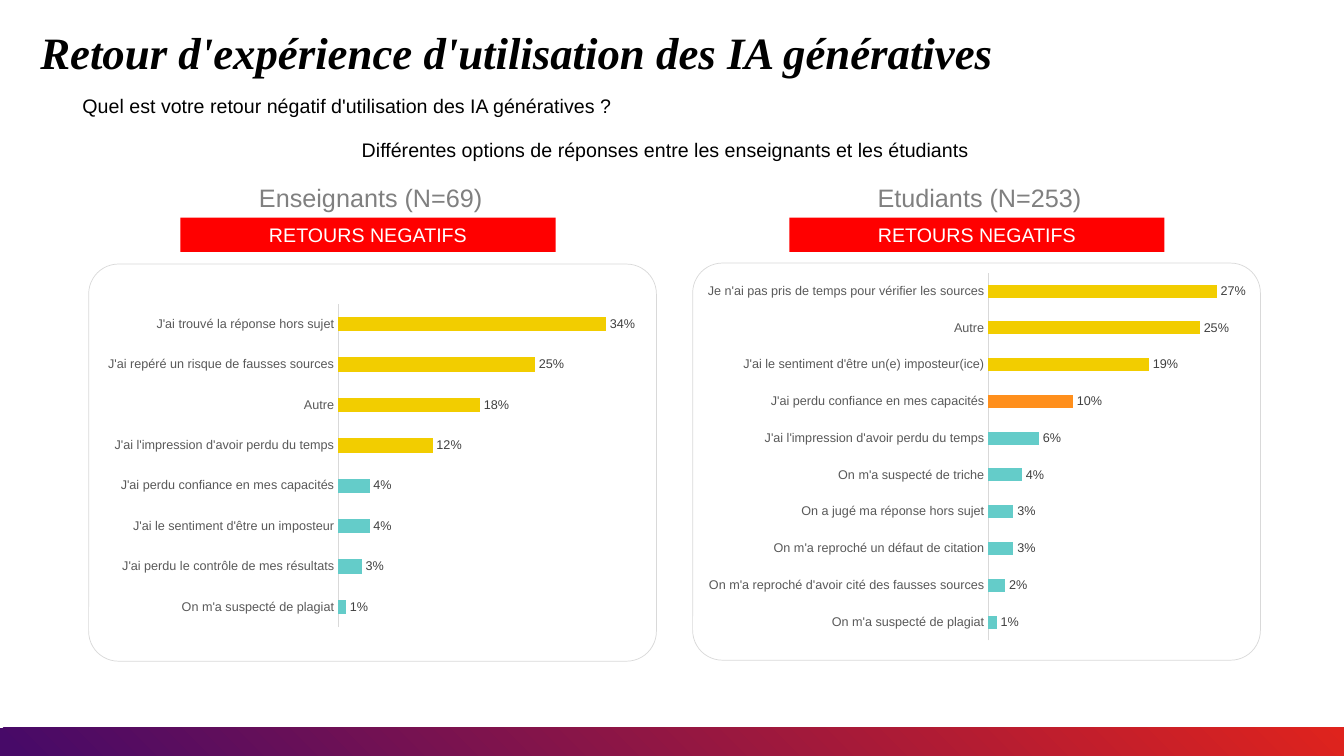
from dataclasses import dataclass

from lxml import etree
from pptx import Presentation
from pptx.chart.data import CategoryChartData
from pptx.dml.color import RGBColor
from pptx.enum.chart import XL_CHART_TYPE as ChartType
from pptx.enum.chart import XL_LABEL_POSITION as LabelPosition
from pptx.enum.chart import XL_TICK_MARK as TickMark
from pptx.enum.shapes import MSO_SHAPE as Preset
from pptx.enum.text import MSO_ANCHOR as Anchor
from pptx.enum.text import PP_ALIGN as Align
from pptx.oxml.ns import qn
from pptx.util import Inches, Pt


@dataclass(frozen=True)
class Theme:
    body_font: str = "Arial"
    title_font: str = "Times New Roman"
    black: str = "000000"
    white: str = "FFFFFF"
    heading: str = "808080"
    banner: str = "FF0000"
    border: str = "D9D9D9"
    category: str = "595959"
    value: str = "404040"
    high: str = "F2CD00"
    medium: str = "FF8F1C"
    low: str = "64CCC9"
    footer_start: str = "DF231D"
    footer_end: str = "470A68"
    title_size: int = 32
    heading_size: int = 18
    text_size: int = 14
    chart_size: int = 10
    label_size: int = 9


THEME = Theme()
WIDTH, HEIGHT = Inches(13.33), Inches(7.5)

# Boxes are left, top, width, height on a grid of 100 columns and 100 rows
FOOTER_BOX = (0, 96.27, 100, 3.73)
TITLE_BOX = (3, 4.13, 92.35, 13.47)
QUESTION_BOX = (5.4, 11.73, 42, 4.53)
NOTE_BOX = (26.18, 17.6, 47.71, 4.53)

GROUPS = [
    {
        "heading": "Enseignants (N=69)",
        "heading_box": (18.53, 23.47, 19.58, 5.33),
        "heading_align": Align.LEFT,
        "banner_box": (13.43, 28.8, 27.91, 4.53),
        "panel_box": (6.6, 34.93, 42.24, 52.53),
        "chart_box": (7.2, 39.33, 42.24, 44.53),
        "maximum": 0.4,
        "answers": [
            ("On m'a suspecté de plagiat", 0.01),
            ("J'ai perdu le contrôle de mes résultats", 0.03),
            ("J'ai le sentiment d'être un imposteur", 0.04),
            ("J'ai perdu confiance en mes capacités", 0.04),
            ("J'ai l'impression d'avoir perdu du temps", 0.12),
            ("Autre", 0.18),
            ("J'ai repéré un risque de fausses sources", 0.25),
            ("J'ai trouvé la réponse hors sujet", 0.34),
        ],
    },
    {
        "heading": "Etudiants (N=253)",
        "heading_box": (63.09, 23.47, 19.58, 5.33),
        "heading_align": Align.CENTER,
        "banner_box": (58.74, 28.8, 27.91, 4.53),
        "panel_box": (51.54, 34.8, 42.24, 52.53),
        "chart_box": (51.84, 35.07, 41.41, 50.67),
        "maximum": 0.3,
        "answers": [
            ("On m'a suspecté de plagiat", 0.01),
            ("On m'a reproché d'avoir cité des fausses sources", 0.02),
            ("On m'a reproché un défaut de citation", 0.03),
            ("On a jugé ma réponse hors sujet", 0.03),
            ("On m'a suspecté de triche", 0.04),
            ("J'ai l'impression d'avoir perdu du temps", 0.06),
            ("J'ai perdu confiance en mes capacités", 0.1),
            ("J'ai le sentiment d'être un(e) imposteur(ice)", 0.19),
            ("Autre", 0.25),
            ("Je n'ai pas pris de temps pour vérifier les sources", 0.27),
        ],
    },
]


def place(box):
    return [round(share * side / 100) for share, side in zip(box, (WIDTH, HEIGHT) * 2)]


def apply(target, values):
    for name, value in values.items():
        setattr(target, name, value)


def style_font(font, size, color, name=THEME.body_font, **values):
    apply(font, {"size": Pt(size), "name": name, **values})
    font.color.rgb = RGBColor.from_string(color)


def fill_solid(fill, color):
    fill.solid()
    fill.fore_color.rgb = RGBColor.from_string(color)


def write(shape, text, size, color, align=Align.LEFT, **font_values):
    shape.text_frame.word_wrap = True
    paragraph = shape.text_frame.paragraphs[0]
    paragraph.alignment = align
    run = paragraph.add_run()
    run.text = text
    style_font(run.font, size, color, **font_values)


def add_text(slide, box, *content, **values):
    shape = slide.shapes.add_textbox(*place(box))
    write(shape, *content, **values)
    return shape


def add_plain_shape(slide, preset, box):
    shape = slide.shapes.add_shape(preset, *place(box))
    shape.shadow.inherit = False
    shape.line.fill.background()
    return shape


def add_footer(slide):
    footer = add_plain_shape(slide, Preset.RECTANGLE, FOOTER_BOX)
    footer.fill.gradient()
    colors = (THEME.footer_start, THEME.footer_end)
    for stop, position, color in zip(footer.fill.gradient_stops, (0, 0.99), colors):
        stop.position = position
        stop.color.rgb = RGBColor.from_string(color)
    # Circular gradient that starts in the top right corner
    gradient = footer._element.spPr.find(qn("a:gradFill"))
    gradient.remove(gradient.find(qn("a:lin")))
    circle = etree.SubElement(gradient, qn("a:path"), {"path": "circle"})
    etree.SubElement(circle, qn("a:fillToRect"), {"l": "100000", "b": "100000"})


def add_title(slide):
    title = add_text(slide, TITLE_BOX, "Retour d'expérience d'utilisation des IA génératives",
                     THEME.title_size, THEME.black, name=THEME.title_font,
                     bold=True, italic=True)
    apply(title.text_frame, dict.fromkeys(
        ("margin_left", "margin_top", "margin_right", "margin_bottom"), 0))
    title.text_frame.paragraphs[0].line_spacing = 0.9


def add_banner(slide, box):
    banner = add_plain_shape(slide, Preset.RECTANGLE, box)
    fill_solid(banner.fill, THEME.banner)
    banner.text_frame.vertical_anchor = Anchor.MIDDLE
    write(banner, "RETOURS NEGATIFS", THEME.text_size, THEME.white, Align.CENTER)


def add_panel(slide, box):
    panel = add_plain_shape(slide, Preset.ROUNDED_RECTANGLE, box)
    panel.adjustments[0] = 0.075
    panel.fill.background()
    fill_solid(panel.line.fill, THEME.border)
    panel.line.width = Pt(0.5)


def bar_color(share):
    if share < 0.1:
        return THEME.low
    return THEME.medium if share == 0.1 else THEME.high


def add_bar_chart(slide, box, answers, maximum):
    data = CategoryChartData(number_format="0%")
    data.categories, shares = zip(*answers)
    data.add_series("Series 1", shares)
    chart = slide.shapes.add_chart(ChartType.BAR_CLUSTERED, *place(box), data).chart
    apply(chart, {"has_legend": False, "has_title": False})
    style_font(chart.font, THEME.chart_size, THEME.black)

    # Axes
    apply(chart.value_axis, {"visible": False, "has_major_gridlines": False,
                             "minimum_scale": 0, "maximum_scale": maximum})
    axis = chart.category_axis
    apply(axis, {"major_tick_mark": TickMark.NONE, "has_major_gridlines": False})
    style_font(axis.tick_labels.font, THEME.label_size, THEME.category)
    fill_solid(axis.format.line.fill, THEME.border)
    axis.format.line.width = Pt(0.75)

    # Bars and their values
    plot = chart.plots[0]
    apply(plot, {"gap_width": 182, "vary_by_categories": False})
    series = plot.series[0]
    fill_solid(series.format.fill, THEME.high)
    for index, share in enumerate(shares):
        fill_solid(series.points[index].format.fill, bar_color(share))
    labels = series.data_labels
    apply(labels, {"show_value": True, "position": LabelPosition.OUTSIDE_END,
                   "number_format": "0%", "number_format_is_linked": False})
    style_font(labels.font, THEME.label_size, THEME.value)


def add_group(slide, group):
    add_text(slide, group["heading_box"], group["heading"], THEME.heading_size,
             THEME.heading, group["heading_align"])
    add_banner(slide, group["banner_box"])
    add_panel(slide, group["panel_box"])
    add_bar_chart(slide, group["chart_box"], group["answers"], group["maximum"])


def main():
    presentation = Presentation()
    apply(presentation, {"slide_width": WIDTH, "slide_height": HEIGHT})
    slide = presentation.slides.add_slide(presentation.slide_layouts[6])
    add_footer(slide)
    add_title(slide)
    add_text(slide, QUESTION_BOX, "Quel est votre retour négatif d'utilisation des IA génératives ?",
             THEME.text_size, THEME.black)
    add_text(slide, NOTE_BOX,
             "Différentes options de réponses entre les enseignants et les étudiants",
             THEME.text_size, THEME.black)
    for group in GROUPS:
        add_group(slide, group)
    presentation.save("out.pptx")


if __name__ == "__main__":
    main()
